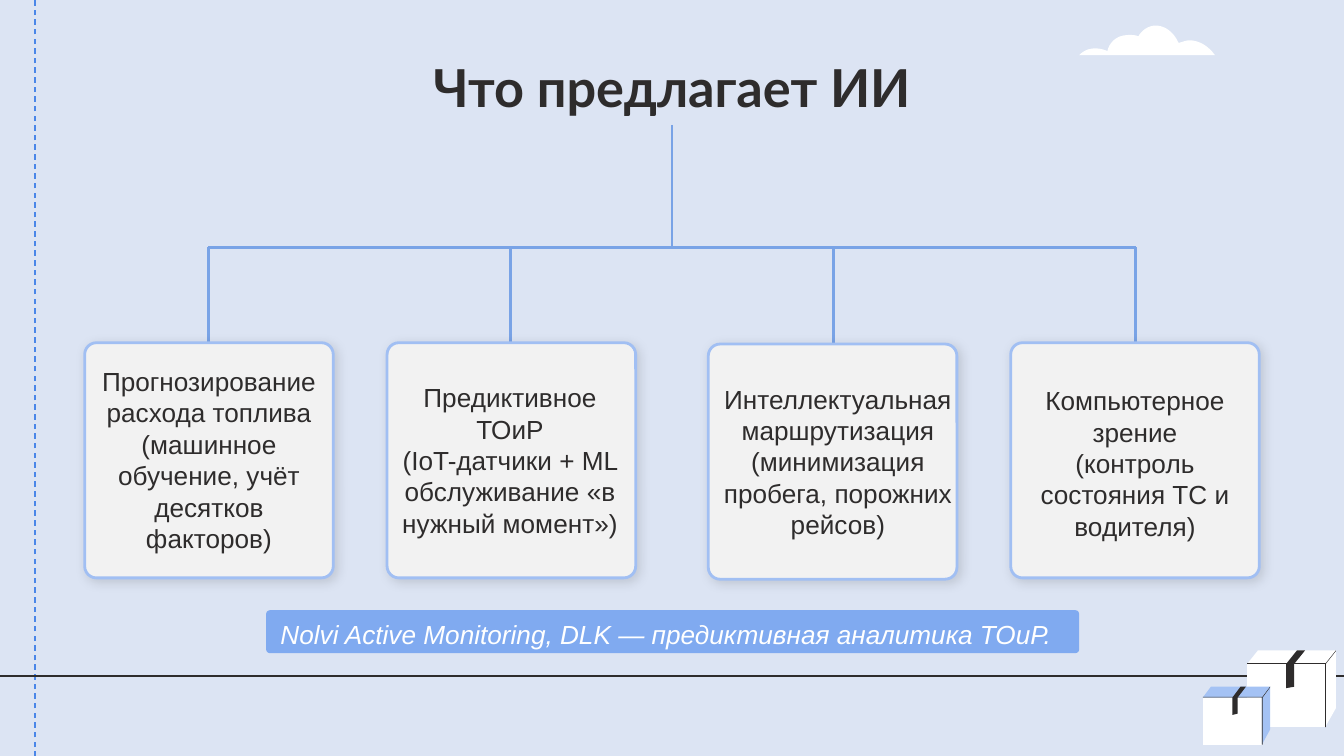
"""Build the slide on what AI offers to vehicle fleet maintenance."""
from typing import NamedTuple

from lxml import etree
from pptx import Presentation
from pptx.dml.color import RGBColor
from pptx.enum.dml import MSO_LINE
from pptx.enum.shapes import MSO_CONNECTOR, MSO_SHAPE
from pptx.enum.text import MSO_ANCHOR, PP_ALIGN
from pptx.oxml.ns import qn
from pptx.util import Pt

PX = 9144
WIDTH = 1000
STRAIGHT = MSO_CONNECTOR.STRAIGHT
ROUNDED = MSO_SHAPE.ROUNDED_RECTANGLE
DASH = MSO_LINE.DASH
TOP, MIDDLE = MSO_ANCHOR.TOP, MSO_ANCHOR.MIDDLE
LEFT, CENTER = PP_ALIGN.LEFT, PP_ALIGN.CENTER

BACKGROUND = RGBColor(0xDC, 0xE4, 0xF3)
INK = RGBColor(0x2E, 0x2C, 0x2C)
WHITE = RGBColor(0xFF, 0xFF, 0xFF)
MARGIN_BLUE = RGBColor(0x4A, 0x86, 0xE8)
TREE_BLUE = RGBColor(0x79, 0xA3, 0xE6)
CARD_FILL = RGBColor(0xF2, 0xF2, 0xF2)
CARD_LINE = RGBColor(0xA1, 0xBF, 0xF3)
BOX_BLUE = RGBColor(0xA4, 0xC2, 0xF4)
BANNER_BLUE = RGBColor(0x80, 0xAA, 0xF0)

TRUNK_X, TRUNK_TOP, BRANCH_Y = 500, 93, 184
CARD_TOP, CARD_W, CARD_H = 255, 185, 175
BODY_SIZE = 14


class Card(NamedTuple):
    x: int
    y: int
    branch_x: int
    lines: list[str]
    label: tuple[int, int, int, int] | None


class Parcel(NamedTuple):
    x: int
    y: int
    w: int
    h: int
    dx: int
    dy: int
    side_rise: int
    tape_x: int
    tape_w: int
    tape_dx: int
    tape_h: int
    color: RGBColor


CARDS = [
    Card(63, CARD_TOP, 155,
         ["Прогнозирование расхода топлива (машинное обучение, учёт десятков факторов)"],
         (63, 267, 185, 175)),
    Card(288, CARD_TOP, 380,
         ["Предиктивное ТОиР", "(IoT-датчики + ML обслуживание «в нужный момент»)"],
         (287, 279, 185, 151)),
    Card(527, CARD_TOP + 1, 620,
         ["Интеллектуальная маршрутизация (минимизация пробега, порожних рейсов)"],
         (527, 280, 193, 151)),
    Card(752, CARD_TOP, 845,
         ["Компьютерное зрение", "(контроль состояния ТС и водителя)"], None),
]
PARCELS = [
    Parcel(928, 494, 58, 47, 8, 10, 14, 957, 6, 8, 18, WHITE),
    Parcel(895, 519, 44, 35, 6, 8, 11, 917, 4, 6, 13, BOX_BLUE),
]
CLOUD_START = (860, 19)
CLOUD_CURVES = [
    ((855, 19), (850, 22), (847, 27)),
    ((845, 26), (842, 26), (840, 26)),
    ((826, 26), (824, 38), (824, 38)),
    ((824, 38), (820, 36), (815, 36)),
    ((811, 36), (807, 37), (803, 41)),
    ((803, 41), (904, 41), (904, 41)),
    ((899, 34), (892, 30), (885, 30)),
    ((883, 30), (880, 31), (877, 32)),
    ((873, 23), (866, 19), (860, 19)),
]


def box(x: int, y: int, w: int, h: int) -> tuple[int, ...]:
    """Turn a px box into EMU."""
    return x * PX, y * PX, w * PX, h * PX


def add_line(s, start: tuple, end: tuple, color: RGBColor, width: float):
    """Draw a straight line without a shadow."""
    c = s.shapes.add_connector(STRAIGHT, *(v * PX for v in (*start, *end)))
    c.line.color.rgb = color
    c.line.width = Pt(width)
    etree.SubElement(c._element.spPr, qn("a:effectLst"))
    return c


def add_polygon(s, points: list[tuple], color: RGBColor) -> None:
    """Draw a filled outline."""
    emu = [(x * PX, y * PX) for x, y in points]
    builder = s.shapes.build_freeform(*emu[0])
    builder.add_line_segments(emu[1:])
    sp = builder.convert_to_shape()
    sp.shadow.inherit = False
    sp.fill.solid()
    sp.fill.fore_color.rgb = color
    sp.line.fill.background()


def curve_points(start: tuple, curves: list[tuple], steps: int = 10) -> list[tuple]:
    """Sample a chain of cubic curves."""
    points = [start]
    for a, b, c in curves:
        p0 = points[-1]
        for i in range(1, steps + 1):
            t = i / steps
            u = 1 - t
            points.append(tuple(
                u**3 * p0[k] + 3 * u * u * t * a[k] + 3 * u * t * t * b[k] + t**3 * c[k]
                for k in (0, 1)))
    return points


def add_parcel(s, b: Parcel) -> None:
    """Draw a parcel with its lid, side, tape and edges."""
    left, top, right, bottom = b.x, b.y, b.x + b.w, b.y + b.h
    back, lid = right + b.dx, top - b.dy
    tape, tape_end = b.tape_x, b.tape_x + b.tape_w
    edge = 0.5
    add_polygon(s, [(left, top), (left, bottom), (right, bottom), (right, top)], WHITE)
    add_polygon(s, [(back, lid), (right, top), (right, bottom),
                    (back, bottom - b.side_rise)], b.color)
    add_polygon(s, [(left + b.dx, lid), (left, top), (right, top), (back, lid)], b.color)
    add_polygon(s, [(tape + b.tape_dx, lid), (tape, top), (tape, top + b.tape_h),
                    (tape_end, top + b.tape_h - 1), (tape_end, top),
                    (tape_end + b.tape_dx, lid)], INK)
    add_polygon(s, [(left, top - edge), (left, top), (right, top), (right, bottom),
                    (right + edge, bottom), (right + edge, top - edge)], INK)
    add_polygon(s, [(back, lid), (right, top), (right + edge, top), (back, lid + edge)], INK)


def write(sp, lines: list[str], color: RGBColor, align, anchor, size: int = BODY_SIZE,
          font: str = "Arial", bold: bool = False, italic: bool = False,
          margin_top: int = 5) -> None:
    """Fill a shape with evenly formatted paragraphs."""
    tf = sp.text_frame
    tf.word_wrap = True
    tf.vertical_anchor = anchor
    tf.margin_top = margin_top * PX
    tf.text = "\n".join(lines)
    for p in tf.paragraphs:
        p.alignment = align
        for r in p.runs:
            r.font.name, r.font.size = font, Pt(size)
            r.font.bold, r.font.italic = bold, italic
            r.font.color.rgb = color


def add_rounded(s, bounds: tuple, radius: float, fill: RGBColor):
    """Add a flat rounded rectangle without an outline."""
    sp = s.shapes.add_shape(ROUNDED, *box(*bounds))
    sp.adjustments[0] = radius
    sp.fill.solid()
    sp.fill.fore_color.rgb = fill
    sp.line.fill.background()
    sp.shadow.inherit = False
    return sp


def add_card(s, card: Card) -> None:
    """Draw a shadowed card and its text."""
    sp = add_rounded(s, (card.x, card.y, CARD_W, CARD_H), 0.05, CARD_FILL)
    sp.line.color.rgb = CARD_LINE
    sp.line.width = Pt(1.5)
    effects = sp._element.spPr.find(qn("a:effectLst"))
    shadow = etree.SubElement(effects, qn("a:outerShdw"), blurRad=str(Pt(6)),
                              dist=str(Pt(2)), dir="2700000", algn="tl", rotWithShape="0")
    tint = etree.SubElement(shadow, qn("a:srgbClr"), val="000000")
    etree.SubElement(tint, qn("a:alpha"), val="12000")
    if card.label:
        label = s.shapes.add_textbox(*box(*card.label))
        write(label, card.lines, INK, CENTER, TOP)
    else:
        write(sp, card.lines, INK, CENTER, MIDDLE, margin_top=9)


def main() -> None:
    """Build and save the slide."""
    prs = Presentation()
    prs.slide_width = WIDTH * PX
    prs.slide_height = prs.slide_width * 9 // 16
    s = prs.slides.add_slide(prs.slide_layouts[6])
    s.background.fill.solid()
    s.background.fill.fore_color.rgb = BACKGROUND
    add_line(s, (26, 563), (26, 0), MARGIN_BLUE, 0.75).line.dash_style = DASH
    add_line(s, (-1, 503), (1006, 503), INK, 0.75)
    add_polygon(s, curve_points(CLOUD_START, CLOUD_CURVES), WHITE)
    for parcel in PARCELS:
        add_parcel(s, parcel)
    title = s.shapes.add_textbox(*box(303, 31, 394, 63))
    write(title, ["Что предлагает ИИ"], INK, CENTER, TOP, 28, "Lato", bold=True,
          margin_top=10)
    hub = (TRUNK_X, BRANCH_Y)
    add_line(s, (TRUNK_X, TRUNK_TOP), hub, TREE_BLUE, 1.5)
    for end in (CARDS[0], CARDS[-1]):
        add_line(s, hub, (end.branch_x, BRANCH_Y), TREE_BLUE, 1.5)
    for card in CARDS:
        add_line(s, (card.branch_x, BRANCH_Y), (card.branch_x, CARD_TOP), TREE_BLUE, 1.5)
    for card in CARDS:
        add_card(s, card)
    banner = add_rounded(s, (198, 454, 605, 32), 0.09, BANNER_BLUE)
    write(banner, ["Nolvi Active Monitoring, DLK — предиктивная аналитика ТОиР."],
          WHITE, LEFT, MIDDLE, italic=True, margin_top=9)
    prs.save("out.pptx")


if __name__ == "__main__":
    main()
